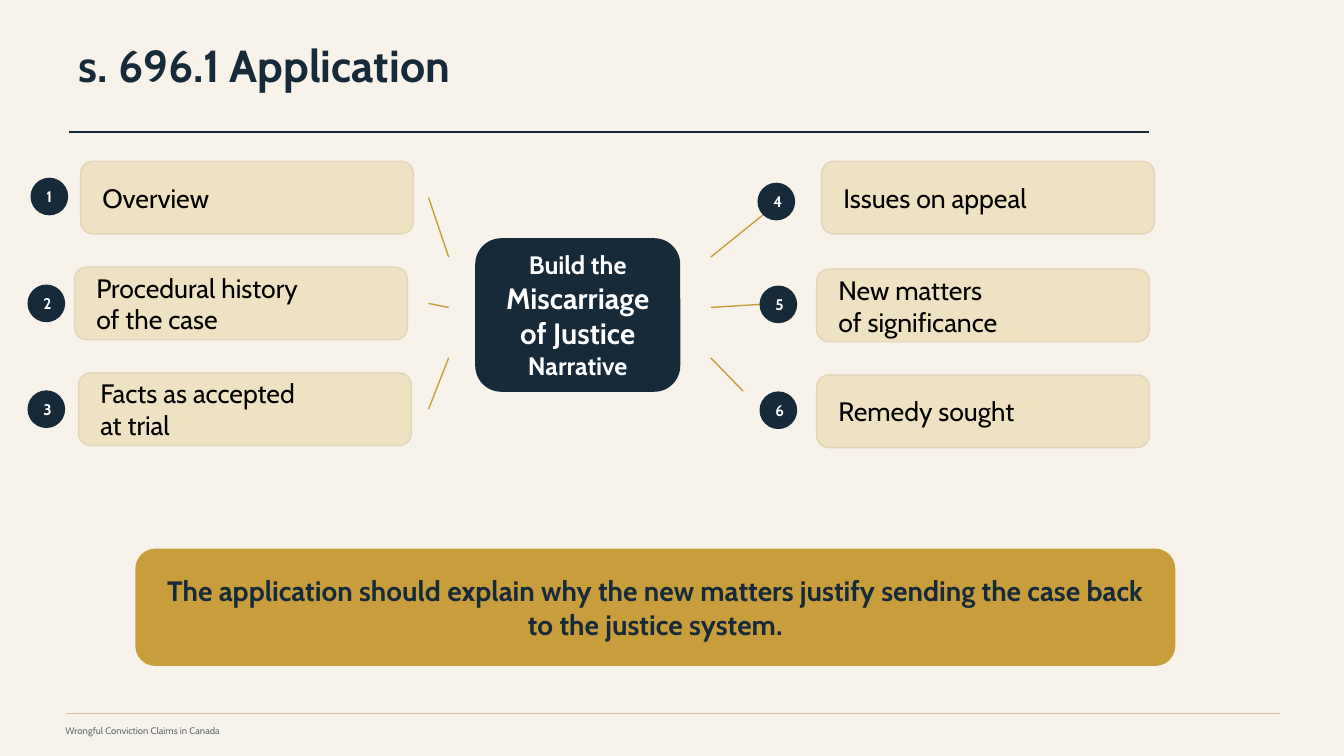
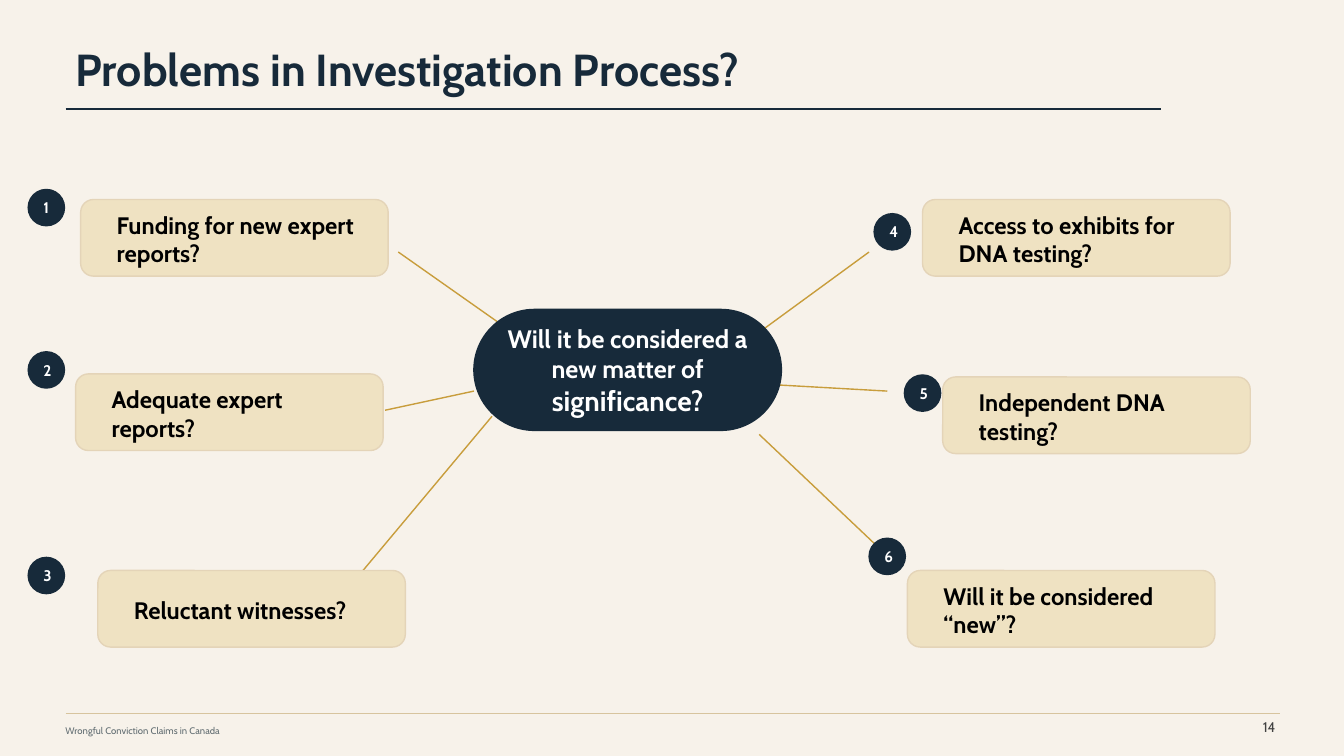
import lxml.etree
import pptx
import pptx.dml.color
import pptx.enum.shapes
import pptx.enum.text
import pptx.oxml.ns
import pptx.util

WIDE, HIGH = 13.33, 7.5

THEME = {
    "font": "Cabin",
    "paper": "F7F2EA", "navy": "172A3A", "gold": "C89D3C", "sand": "EFE2C2",
    "edge": "E4D4B8", "rule": "D7C49E", "white": "FFFFFF", "black": "000000",
    "gray": "5F6B70", "dark": "424242",
    "title": 32, "badge": 11, "foot": 6.8, "page": 10,
    "thin": 1, "thick": 1.25,
}
INSET = (0.1, 0.05, 0.1, 0.05)
DOT = 0.36
FOOT = "Wrongful Conviction Claims in Canada"

SLIDES = [
    {
        "title": "s. 696.1 Application",
        "place": (0.68, 0.32, 7.8, 0.55),
        "rule": (0.68, 1.31, 11.4, 1.31),
        "card": {"size": (3.3, 0.72), "inset": (0.18, 0.08, 0.12, 0.08),
                 "type": 19, "bold": False},
        "cards": [
            ("Overview", (0.8, 1.6), (0.31, 1.77)),
            ("Procedural history\nof the case", (0.74, 2.65), (0.28, 2.83)),
            ("Facts as accepted\nat trial", (0.78, 3.7), (0.28, 3.88)),
            ("Issues on appeal", (8.15, 1.6), (7.52, 1.82)),
            ("New matters\nof significance", (8.1, 2.67), (7.54, 2.84)),
            ("Remedy sought", (8.1, 3.72), (7.54, 3.89)),
        ],
        "spokes": [
            (4.25, 1.96, 4.45, 2.55), (4.25, 3.01, 4.45, 3.05),
            (4.25, 4.06, 4.45, 3.55), (7.57, 2.13, 7.05, 2.55),
            (7.54, 3.02, 7.05, 3.05), (7.37, 3.88, 7.05, 3.55),
        ],
        "hub": {"place": (4.72, 2.37, 2.02, 1.51), "round": None,
                "lines": [("Build the", 18), ("Miscarriage of Justice", 21),
                          ("Narrative", 18)]},
        "banner": {"place": (1.35, 5.45, 10.3, 1.15),
                   "lines": [("The application should explain why the new matters "
                              "justify sending the case back to the justice system.", 20)]},
    },
    {
        "title": "Problems in Investigation Process?",
        "place": (0.65, 0.36, 10.6, 0.52),
        "rule": (0.65, 1.08, 11.52, 1.08),
        "card": {"size": (3.05, 0.76), "inset": (0.32, 0.07, 0.14, 0.05),
                 "type": 17, "bold": True},
        "cards": [
            ("Funding for new expert reports?", (0.8, 1.98), (0.28, 1.88)),
            ("Adequate expert reports?", (0.75, 3.71), (0.28, 3.49)),
            ("Reluctant witnesses?", (0.97, 5.66), (0.28, 5.53)),
            ("Access to exhibits for DNA testing?", (9.15, 1.98), (8.67, 2.12)),
            ("Independent DNA testing?", (9.35, 3.74), (8.97, 3.72)),
            ("Will it be considered “new”?", (9, 5.66), (8.62, 5.34)),
        ],
        "spokes": [
            (3.95, 2.5, 4.93, 3.19), (3.82, 4.07, 4.7, 3.88),
            (3.6, 5.66, 4.88, 4.13), (8.62, 2.5, 7.58, 3.26),
            (8.8, 3.88, 7.73, 3.82), (8.67, 5.39, 7.53, 4.31),
        ],
        "hub": {"place": (4.7, 3.07, 3.05, 1.2), "round": 0.5,
                "lines": [("Will it be considered a new matter of", 18),
                          ("significance?", 20)]},
        "page": "14",
    },
]

KIND = pptx.enum.shapes.MSO_SHAPE
SIDE = pptx.enum.text.PP_ALIGN
HOLD = pptx.enum.text.MSO_ANCHOR


def tint(name):
    return pptx.dml.color.RGBColor.from_string(THEME[name])


def units(nums):
    return [pptx.util.Inches(num) for num in nums]


def write(shape, lines, color, bold=False, align=SIDE.LEFT,
          anchor=HOLD.MIDDLE, inset=INSET):
    frame = shape.text_frame
    frame.word_wrap = True
    frame.auto_size = pptx.enum.text.MSO_AUTO_SIZE.NONE
    frame.vertical_anchor = anchor
    (frame.margin_left, frame.margin_top,
     frame.margin_right, frame.margin_bottom) = units(inset)
    for row, (text, size) in enumerate(lines):
        para = frame.add_paragraph() if row else frame.paragraphs[0]
        para.alignment = align
        for part, words in enumerate(text.split("\n")):
            if part:
                para.add_line_break()
            run = para.add_run()
            run.text = words
            run.font.name = THEME["font"]
            run.font.size = pptx.util.Pt(size)
            run.font.bold = bold
            run.font.color.rgb = tint(color)


def draw(slide, kind, place, fill, edge):
    shape = slide.shapes.add_shape(kind, *units(place))
    shape.shadow.inherit = False
    shape.fill.solid()
    shape.fill.fore_color.rgb = tint(fill)
    shape.line.color.rgb = tint(edge)
    shape.line.width = pptx.util.Pt(THEME["thin"])
    return shape


def link(slide, ends, color, width):
    line = slide.shapes.add_connector(
        pptx.enum.shapes.MSO_CONNECTOR.STRAIGHT, *units(ends))
    line.line.color.rgb = tint(color)
    line.line.width = pptx.util.Pt(THEME[width])
    lxml.etree.SubElement(line.element.spPr, pptx.oxml.ns.qn("a:effectLst"))
    return line


def label(slide, place, text, size, color, **style):
    box = slide.shapes.add_textbox(*units(place))
    write(box, [(text, THEME[size])], color, **style)
    return box


def frame(slide):
    layout = slide.slide_layout
    layout.background.fill.solid()
    layout.background.fill.fore_color.rgb = tint("paper")
    parts = [
        link(slide, (0.65, 7.08, 12.7, 7.08), "rule", "thin"),
        label(slide, (0.65, 7.15, 5.8, 0.2), FOOT, "foot", "gray", inset=(0,) * 4),
    ]
    for mark, part in enumerate(parts, 100):
        part.element.xpath(".//p:cNvPr")[0].set("id", str(mark))
        layout.shapes.element.append(part.element)


def build(slide, data):
    title = slide.shapes.title
    title.left, title.top, title.width, title.height = units(data["place"])
    write(title, [(data["title"], THEME["title"])], "navy", True, anchor=HOLD.TOP)
    link(slide, data["rule"], "navy", "thick")
    for ends in data["spokes"]:
        link(slide, ends, "gold", "thin")

    hub = draw(slide, KIND.ROUNDED_RECTANGLE, data["hub"]["place"], "navy", "navy")
    if data["hub"]["round"]:
        hub.adjustments[0] = data["hub"]["round"]
    write(hub, data["hub"]["lines"], "white", True, SIDE.CENTER)

    look = data["card"]
    for count, (text, spot, dot) in enumerate(data["cards"], 1):
        card = draw(slide, KIND.ROUNDED_RECTANGLE, spot + look["size"], "sand", "edge")
        write(card, [(text, look["type"])], "black", look["bold"], inset=look["inset"])
        badge = draw(slide, KIND.OVAL, dot + (DOT, DOT), "navy", "navy")
        write(badge, [(str(count), THEME["badge"])], "white", True, SIDE.CENTER)

    if "banner" in data:
        banner = draw(slide, KIND.ROUNDED_RECTANGLE, data["banner"]["place"],
                      "gold", "gold")
        write(banner, data["banner"]["lines"], "navy", True, SIDE.CENTER)
    if "page" in data:
        label(slide, (12.05, 7.08, 0.7, 0.3), data["page"], "page", "dark",
              align=SIDE.RIGHT, anchor=HOLD.TOP)


def main():
    deck = pptx.Presentation()
    deck.slide_width, deck.slide_height = units((WIDE, HIGH))
    for index, data in enumerate(SLIDES):
        slide = deck.slides.add_slide(deck.slide_layouts[5])
        if not index:
            frame(slide)
        build(slide, data)
    deck.save("out.pptx")


if __name__ == "__main__":
    main()
